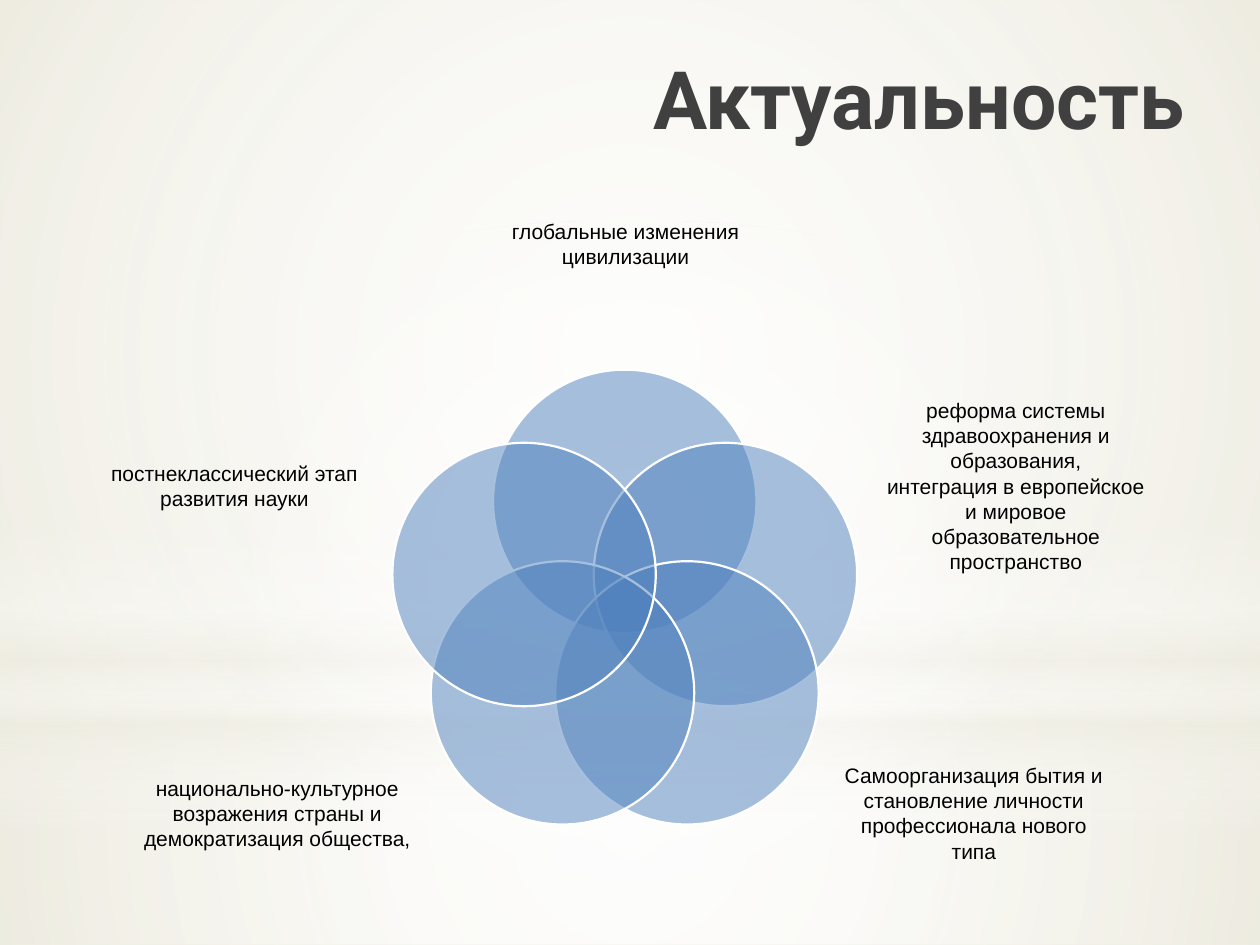
"""Builds a slide with a five-circle Venn diagram on a soft gradient background."""
from dataclasses import dataclass
from math import cos, radians, sin

from lxml import etree
from pptx import Presentation
from pptx.dml.color import RGBColor
from pptx.enum.shapes import MSO_SHAPE
from pptx.enum.text import MSO_ANCHOR, PP_ALIGN
from pptx.oxml import parse_xml
from pptx.oxml.ns import nsdecls, qn
from pptx.util import Pt

RECT, OVAL = MSO_SHAPE.RECTANGLE, MSO_SHAPE.OVAL
TOP, MIDDLE = MSO_ANCHOR.TOP, MSO_ANCHOR.MIDDLE
CENTER, RIGHT = PP_ALIGN.CENTER, PP_ALIGN.RIGHT


@dataclass(frozen=True)
class Theme:
    white: str = "FFFFFF"
    cream: str = "EEECE1"
    blue: str = "4F81BD"
    title: str = "404040"
    text: str = "000000"
    title_font: str = "Roboto"
    text_font: str = "Arial"
    title_size: float = 46
    text_size: float = 12
    circle_opacity: int = 50
    circle_line: float = 1.25


T = Theme()
W, H = 720, 540
VENN_X, VENN_Y, RING, DIAMETER = 357, 347, 60.5, 150.5
RADIAL = '<a:path path="circle"><a:fillToRect l="50000" t="50000" r="50000" b="50000"/></a:path>'
VERTICAL = '<a:lin ang="5400000" scaled="0"/>'

BACKDROP = [
    (RECT, (0, 402, W, 138), RADIAL,
     [(0, T.white, 91), (37, T.white, 76), (100, T.cream, 79)]),
    (RECT, (0, 0, W, 402), RADIAL,
     [(0, T.white, 89), (48, T.white, 62), (100, T.cream, 79)]),
    (RECT, (0, 296.5, W, 180), VERTICAL,
     [(0, T.white, 0), (29, T.white, 30), (45, T.cream, 40),
      (55, T.white, 26), (65, T.cream, 60), (100, T.white, 0)]),
    (OVAL, (0, 126, W, 402), RADIAL, [(0, T.white, 100), (56, T.white, 0)]),
]

LABELS = [
    ((270, 88.5, 175, 101.5), ["глобальные изменения", "цивилизации"]),
    ((502, 222.5, 157, 110), ["реформа системы здравоохранения и образования,",
                              "интеграция в европейское",
                              "и мировое образовательное", "пространство"]),
    ((478, 409.5, 157, 110), ["Самоорганизация бытия и становление личности "
                              "профессионала нового типа"]),
    ((80, 409.5, 157, 110), ["национально-культурное возражения страны и "
                             "демократизация общества,"]),
    ((55.5, 222.5, 157, 110), ["постнеклассический этап", "развития науки"]),
]


def rgb(color):
    return RGBColor.from_string(color)


def add_shape(shapes, kind, box):
    sp = shapes.add_shape(kind, *map(Pt, box))
    sp.shadow.inherit = False
    return sp


def add_gradient(shapes, kind, box, direction, stops):
    sp = add_shape(shapes, kind, box)
    sp.line.fill.background()
    sp.fill.background()
    gs = "".join(
        f'<a:gs pos="{pos * 1000}"><a:srgbClr val="{color}">'
        f'<a:alpha val="{alpha * 1000}"/></a:srgbClr></a:gs>'
        for pos, color, alpha in stops)
    grad = parse_xml(f'<a:gradFill {nsdecls("a")} rotWithShape="1">'
                     f'<a:gsLst>{gs}</a:gsLst>{direction}</a:gradFill>')
    props = sp._element.spPr
    props.replace(props.find(qn("a:noFill")), grad)


def add_circle(shapes, angle):
    x = VENN_X + RING * sin(radians(angle)) - DIAMETER / 2
    y = VENN_Y - RING * cos(radians(angle)) - DIAMETER / 2
    sp = add_shape(shapes, OVAL, (x, y, DIAMETER, DIAMETER))
    sp.fill.solid()
    sp.fill.fore_color.rgb = rgb(T.blue)
    color = sp._element.spPr.find(qn("a:solidFill"))[0]
    etree.SubElement(color, qn("a:alpha"), val=str(T.circle_opacity * 1000))
    sp.line.color.rgb = rgb(T.white)
    sp.line.width = Pt(T.circle_line)


def add_text(shapes, box, lines, font=T.text_font, size=T.text_size, color=T.text,
             bold=False, align=CENTER, anchor=MIDDLE, insets=(0, 0, 0, 0)):
    tf = shapes.add_textbox(*map(Pt, box)).text_frame
    tf.word_wrap = True
    tf.vertical_anchor = anchor
    tf.margin_left, tf.margin_top, tf.margin_right, tf.margin_bottom = map(Pt, insets)
    for i, line in enumerate(lines):
        p = tf.paragraphs[0] if i == 0 else tf.add_paragraph()
        p.alignment = align
        r = p.add_run()
        r.text = line
        r.font.name, r.font.size, r.font.bold = font, Pt(size), bold
        r.font.color.rgb = rgb(color)


def main():
    prs = Presentation()
    prs.slide_width, prs.slide_height = Pt(W), Pt(H)
    s = prs.slides.add_slide(prs.slide_layouts[6])
    s.background.fill.solid()
    s.background.fill.fore_color.rgb = rgb(T.cream)
    for layer in BACKDROP:
        add_gradient(s.shapes, *layer)
    add_text(s.shapes, (36, 21.6, 648, 90), ["Актуальность"], font=T.title_font,
             size=T.title_size, color=T.title, bold=True, align=RIGHT, anchor=TOP,
             insets=(7.2, 6.5, 7.2, 3.6))
    venn = s.shapes.add_group_shape().shapes
    for i, (box, lines) in enumerate(LABELS):
        add_circle(venn, i * 360 / len(LABELS))
        add_text(venn, box, lines)
    prs.save("out.pptx")


if __name__ == "__main__":
    main()
